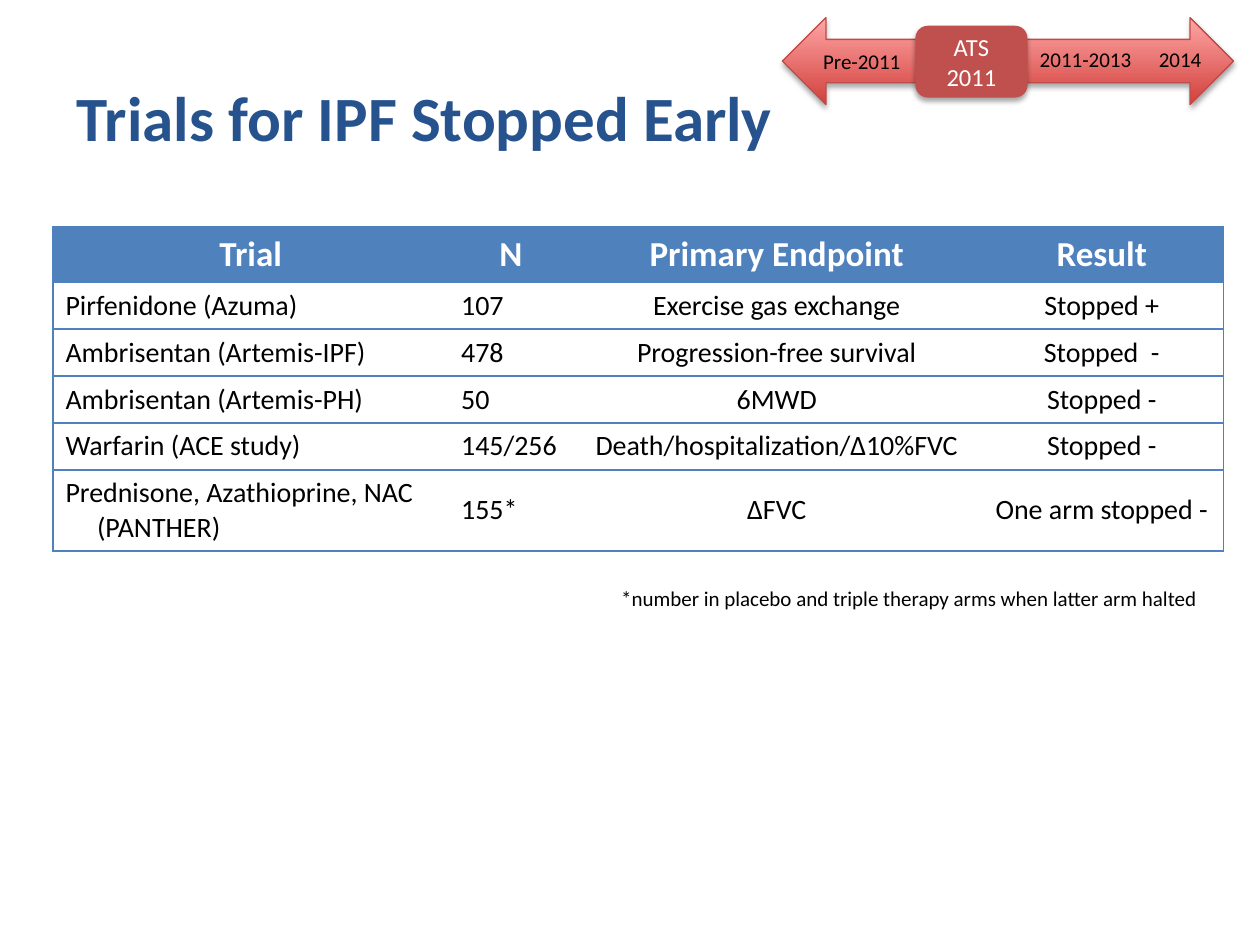
import pptx
import pptx.util
import pptx.dml.color
import pptx.enum.shapes
import pptx.enum.text
import pptx.oxml
import pptx.oxml.ns
from dataclasses import dataclass
from lxml import etree

Inches, Pt = pptx.util.Inches, pptx.util.Pt
RGB = pptx.dml.color.RGBColor
SHAPE = pptx.enum.shapes.MSO_SHAPE
ANCHOR = pptx.enum.text.MSO_ANCHOR
ALIGN = pptx.enum.text.PP_ALIGN
AUTO = pptx.enum.text.MSO_AUTO_SIZE
qn = pptx.oxml.ns.qn

NAVY = RGB(0x26, 0x52, 0x8E)
BLUE = RGB(0x4F, 0x81, 0xBD)
RED = RGB(0xC0, 0x50, 0x4D)
ARROW_LINE = RGB(0xBF, 0x4C, 0x48)
ARROW_DARK = RGB(0xD1, 0x40, 0x3C)
ARROW_LIGHT = RGB(0xFF, 0xA6, 0xA5)
BLACK = RGB(0, 0, 0)
WHITE = RGB(0xFF, 0xFF, 0xFF)


@dataclass
class Label:
    text: str
    left: float
    top: float
    width: float
    align: ALIGN = ALIGN.CENTER
    wrap: bool = True


@dataclass
class Column:
    width: float
    align: ALIGN
    anchor: ANCHOR
    hang: float
    tab: bool = False


LABELS = [
    Label("*number in placebo and triple therapy arms when latter arm halted",
          4.78, 4.6, 4.82, ALIGN.RIGHT, False),
    Label("2011-2013", 7.84, 0.32, 1.55),
    Label("2014", 8.87, 0.32, 0.99),
    Label("Pre-2011", 6.3, 0.34, 1.08),
]
HEADER_HANG = 0.38
COLUMNS = [
    Column(3.14, ALIGN.LEFT, ANCHOR.TOP, 0.25, tab=True),
    Column(0.99, ALIGN.LEFT, ANCHOR.MIDDLE, 0.38),
    Column(3.23, ALIGN.CENTER, ANCHOR.MIDDLE, 0),
    Column(1.93, ALIGN.CENTER, ANCHOR.MIDDLE, 0),
]
ROW_HEIGHTS = [0.42, 0.31, 0.32, 0.31, 0.35, 0.57]
TRIALS = [
    ("Trial", "N", "Primary Endpoint", "Result"),
    ("Pirfenidone (Azuma)", "107", "Exercise gas exchange", "Stopped +"),
    ("Ambrisentan (Artemis-IPF)", "478", "Progression-free survival", "Stopped  -"),
    ("Ambrisentan (Artemis-PH)", "50", "6MWD", "Stopped -"),
    ("Warfarin (ACE study)", "145/256", "Death/hospitalization/∆10%FVC", "Stopped -"),
    ("Prednisone, Azathioprine, NAC (PANTHER)", "155*", "∆FVC", "One arm stopped -"),
]


def add_run(p, text: str, size: float, color: RGB, bold: bool = False) -> None:
    r = p.add_run()
    r.text = text
    r.font.name = "Calibri"
    r.font.size = Pt(size)
    r.font.bold = bold
    r.font.color.rgb = color


def add_title(s) -> None:
    sp = s.shapes.title
    sp.left, sp.top, sp.width, sp.height = map(Inches, (0.61, 0.4, 8.62, 0.83))
    tf = sp.text_frame
    tf.auto_size = AUTO.NONE
    tf.vertical_anchor = ANCHOR.BOTTOM
    tf.margin_left = tf.margin_right = 0
    tf.margin_top = tf.margin_bottom = Inches(0.01)
    p = tf.paragraphs[0]
    p.alignment = ALIGN.LEFT
    add_run(p, "Trials for IPF Stopped Early", 36, NAVY, True)


def add_label(s, label: Label) -> None:
    sp = s.shapes.add_textbox(Inches(label.left), Inches(label.top),
                              Inches(label.width), Inches(0.3))
    tf = sp.text_frame
    tf.word_wrap = label.wrap
    tf.auto_size = AUTO.SHAPE_TO_FIT_TEXT
    p = tf.paragraphs[0]
    p.alignment = label.align
    add_run(p, label.text, 12, BLACK)


def add_timeline_shape(s, kind: SHAPE, box: tuple, line: RGB):
    """Add an outlined shape with a soft shadow below it."""
    sp = s.shapes.add_shape(kind, *map(Inches, box))
    sp.line.color.rgb = line
    sp.line.width = Pt(0.75)
    sp.shadow.inherit = False
    effects = sp._element.spPr.find(qn("a:effectLst"))
    shadow = etree.SubElement(effects, qn("a:outerShdw"), blurRad=str(Pt(3.1)),
                              dist=str(Pt(1.8)), dir="5400000", rotWithShape="0")
    color = etree.SubElement(shadow, qn("a:srgbClr"), val="000000")
    etree.SubElement(color, qn("a:alpha"), val="35000")
    return sp


def add_timeline(s) -> None:
    arrow = add_timeline_shape(s, SHAPE.LEFT_RIGHT_ARROW, (6.21, 0.14, 3.58, 0.69), ARROW_LINE)
    arrow.fill.gradient()
    arrow.fill.gradient_angle = 90
    for stop, position, color in zip(arrow.fill.gradient_stops, (0, 1), (ARROW_DARK, ARROW_LIGHT)):
        stop.position = position
        stop.color.rgb = color

    marker = add_timeline_shape(s, SHAPE.ROUNDED_RECTANGLE, (7.27, 0.21, 0.88, 0.56), RED)
    marker.fill.solid()
    marker.fill.fore_color.rgb = RED
    tf = marker.text_frame
    tf.word_wrap = True
    tf.vertical_anchor = ANCHOR.MIDDLE
    p = tf.paragraphs[0]
    p.alignment = ALIGN.CENTER
    add_run(p, "ATS 2011", 14, WHITE)


def set_borders(cell, sides: str) -> None:
    """Draw the named sides (of L, R, T, B) in blue and clear the others."""
    tc_pr = cell._tc.get_or_add_tcPr()
    for side in "LRTB":
        ln = etree.SubElement(tc_pr, qn(f"a:ln{side}"), w=str(Pt(1)))
        if side in sides:
            fill = etree.SubElement(ln, qn("a:solidFill"))
            etree.SubElement(fill, qn("a:srgbClr"), val=str(BLUE))
        else:
            etree.SubElement(ln, qn("a:noFill"))


def fill_cell(cell, text: str, column: Column, header: bool) -> None:
    cell.fill.solid()
    cell.fill.fore_color.rgb = BLUE if header else WHITE
    cell.vertical_anchor = ANCHOR.MIDDLE if header else column.anchor
    p = cell.text_frame.paragraphs[0]
    p.alignment = ALIGN.CENTER if header else column.align
    hang = Inches(HEADER_HANG if header else column.hang)
    p_pr = p._p.get_or_add_pPr()
    p_pr.set("marL", str(hang))
    p_pr.set("indent", str(-hang))
    if column.tab and not header:
        tabs = etree.SubElement(p_pr, qn("a:tabLst"))
        etree.SubElement(tabs, qn("a:tab"), pos=str(hang), algn="l")
    add_run(p, text, 20 if header else 16, WHITE if header else BLACK, header)


def add_trials_table(s) -> None:
    table = s.shapes.add_table(len(TRIALS), len(COLUMNS), Inches(0.42), Inches(1.8),
                               Inches(9.29), Inches(sum(ROW_HEIGHTS))).table
    table.horz_banding = False
    for row, height in zip(table.rows, ROW_HEIGHTS):
        row.height = Inches(height)
    last = len(COLUMNS) - 1
    for j, column in enumerate(COLUMNS):
        table.columns[j].width = Inches(column.width)
        sides = "TB" + ("L" if j == 0 else "R" if j == last else "")
        for i, trial in enumerate(TRIALS):
            cell = table.cell(i, j)
            set_borders(cell, sides)
            fill_cell(cell, trial[j], column, i == 0)


def main() -> None:
    prs = pptx.Presentation()
    prs.slide_width, prs.slide_height = Inches(10), Inches(7.5)
    s = prs.slides.add_slide(prs.slide_layouts[5])
    add_title(s)
    add_trials_table(s)
    add_timeline(s)
    for label in LABELS:
        add_label(s, label)
    prs.save("out.pptx")


if __name__ == "__main__":
    main()
